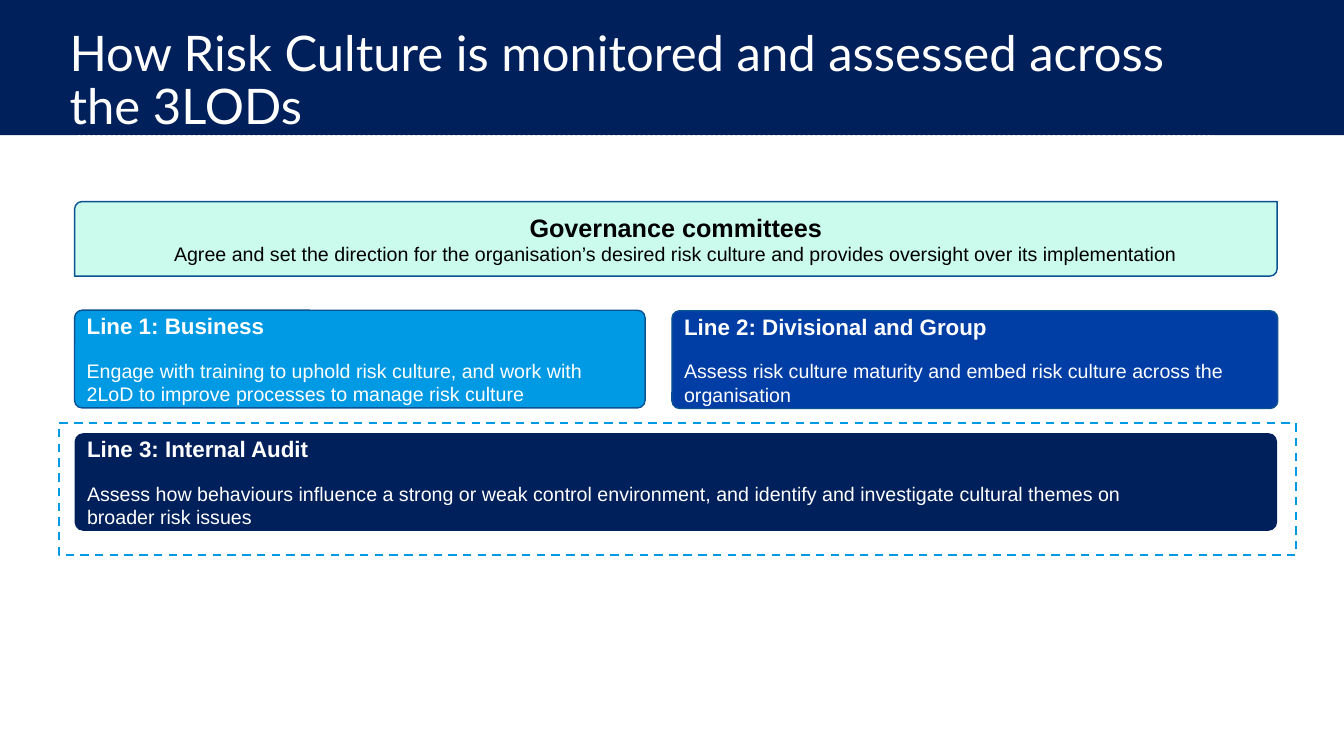
from lxml import etree
from pptx import Presentation
from pptx.dml.color import RGBColor
from pptx.enum.dml import MSO_LINE
from pptx.enum.shapes import MSO_CONNECTOR, MSO_SHAPE
from pptx.enum.text import MSO_ANCHOR, PP_ALIGN
from pptx.oxml.ns import qn
from pptx.util import Pt

RECT = MSO_SHAPE.RECTANGLE
ROUNDED = MSO_SHAPE.ROUNDED_RECTANGLE
DIAGONAL = MSO_SHAPE.ROUND_2_DIAG_RECTANGLE
STRAIGHT = MSO_CONNECTOR.STRAIGHT
DASH = MSO_LINE.DASH
MIDDLE = MSO_ANCHOR.MIDDLE
LEFT, CENTER = PP_ALIGN.LEFT, PP_ALIGN.CENTER

COLORS = {
    "navy": "00205B", "blue": "003DA5", "sky": "009AE4", "mint": "CAFBED",
    "edge": "0B5292", "white": "FFFFFF", "black": "000000",
}


def rgb(name):
    return RGBColor.from_string(COLORS[name])


def write(p, text, size=14, color="white", bold=False, font="Arial",
          align=LEFT, before=0, spacing=1.0):
    p.alignment = align
    p.space_before = Pt(before)
    p.line_spacing = spacing
    r = p.add_run()
    r.text = text
    r.font.name = font
    r.font.size = Pt(size)
    r.font.bold = bold
    r.font.color.rgb = rgb(color)


class Deck:
    def __init__(self, width, height):
        self.prs = Presentation()
        self.prs.slide_width, self.prs.slide_height = Pt(width), Pt(height)
        self.s = self.prs.slides.add_slide(self.prs.slide_layouts[5])

    def title(self, text, x, y, w, h):
        sp = self.s.shapes.title
        sp.left, sp.top, sp.width, sp.height = Pt(x), Pt(y), Pt(w), Pt(h)
        tf = sp.text_frame
        tf.word_wrap = True
        tf.vertical_anchor = MIDDLE
        write(tf.paragraphs[0], text, size=35, font="Lato", spacing=0.9)

    def box(self, x, y, w, h, kind=RECT, fill=None, line=None, weight=1,
            dash=None, adjust=()):
        sp = self.s.shapes.add_shape(kind, Pt(x), Pt(y), Pt(w), Pt(h))
        sp.shadow.inherit = False
        for i, value in enumerate(adjust):
            sp.adjustments[i] = value
        if fill:
            sp.fill.solid()
            sp.fill.fore_color.rgb = rgb(fill)
        else:
            sp.fill.background()
        if line:
            sp.line.color.rgb = rgb(line)
            sp.line.width = Pt(weight)
            sp.line.dash_style = dash
        else:
            sp.line.fill.background()
        return sp

    def card(self, sp, heading, body, size=16, color="white", align=LEFT,
             gap=0, right=7.2):
        tf = sp.text_frame
        tf.word_wrap = True
        tf.vertical_anchor = MIDDLE
        tf.margin_right = Pt(right)
        write(tf.paragraphs[0], heading, size, color, bold=True, align=align)
        write(tf.add_paragraph(), body, color=color, align=align, before=gap)

    def rule(self, x1, x2, y, color, weight):
        c = self.s.shapes.add_connector(STRAIGHT, Pt(x1), Pt(y), Pt(x2), Pt(y))
        c.line.color.rgb = rgb(color)
        c.line.width = Pt(weight)
        c.line.dash_style = DASH
        etree.SubElement(c.element.spPr, qn("a:effectLst"))
        return c


def main():
    deck = Deck(960, 540)
    x, width, card_h = 53.3, 859, 69.8

    # Header band and rule, placed behind the title
    band = deck.box(0, 0, 960, 96.5, fill="navy")
    rule = deck.rule(55.4, 866.2, 96.5, "white", 0.5)
    deck.title("How Risk Culture is monitored and assessed across the 3LODs",
               42.5, 15.8, 834.5, 86.4)
    for item in (band, rule):
        deck.s.shapes.title.element.addprevious(item.element)

    # Governance committees
    sp = deck.box(x, 144, width, 53.3, DIAGONAL, "mint", "edge",
                  adjust=(0.1, 0))
    deck.card(sp, "Governance committees",
              "Agree and set the direction for the organisation’s desired risk "
              "culture and provides oversight over its implementation",
              size=18, color="black", align=CENTER)

    # Three lines of defence: left, top, width, fill, line, corner, right inset
    lines = [
        (x, 221.6, 407.5, "sky", "edge", 0.077, 7.2, "Line 1: Business",
         "Engage with training to uphold risk culture, and work with 2LoD to "
         "improve processes to manage risk culture"),
        (x, 309.4, width, "navy", None, 0.089, 100, "Line 3: Internal Audit",
         "Assess how behaviours influence a strong or weak control "
         "environment, and identify and investigate cultural themes on "
         "broader risk issues"),
        (480, 222, 432.7, "blue", "edge", 0.077, 7.2,
         "Line 2: Divisional and Group",
         "Assess risk culture maturity and embed risk culture across the "
         "organisation"),
    ]
    for left, top, w, fill, line, corner, right, heading, body in lines:
        sp = deck.box(left, top, w, card_h, ROUNDED, fill, line,
                      adjust=(corner,))
        deck.card(sp, heading, body, gap=14, right=right)

    # Dashed highlight around Line 3
    deck.box(42.2, 302.2, 883.6, 94.3, line="sky", weight=1.5, dash=DASH)

    deck.prs.save("out.pptx")


if __name__ == "__main__":
    main()
